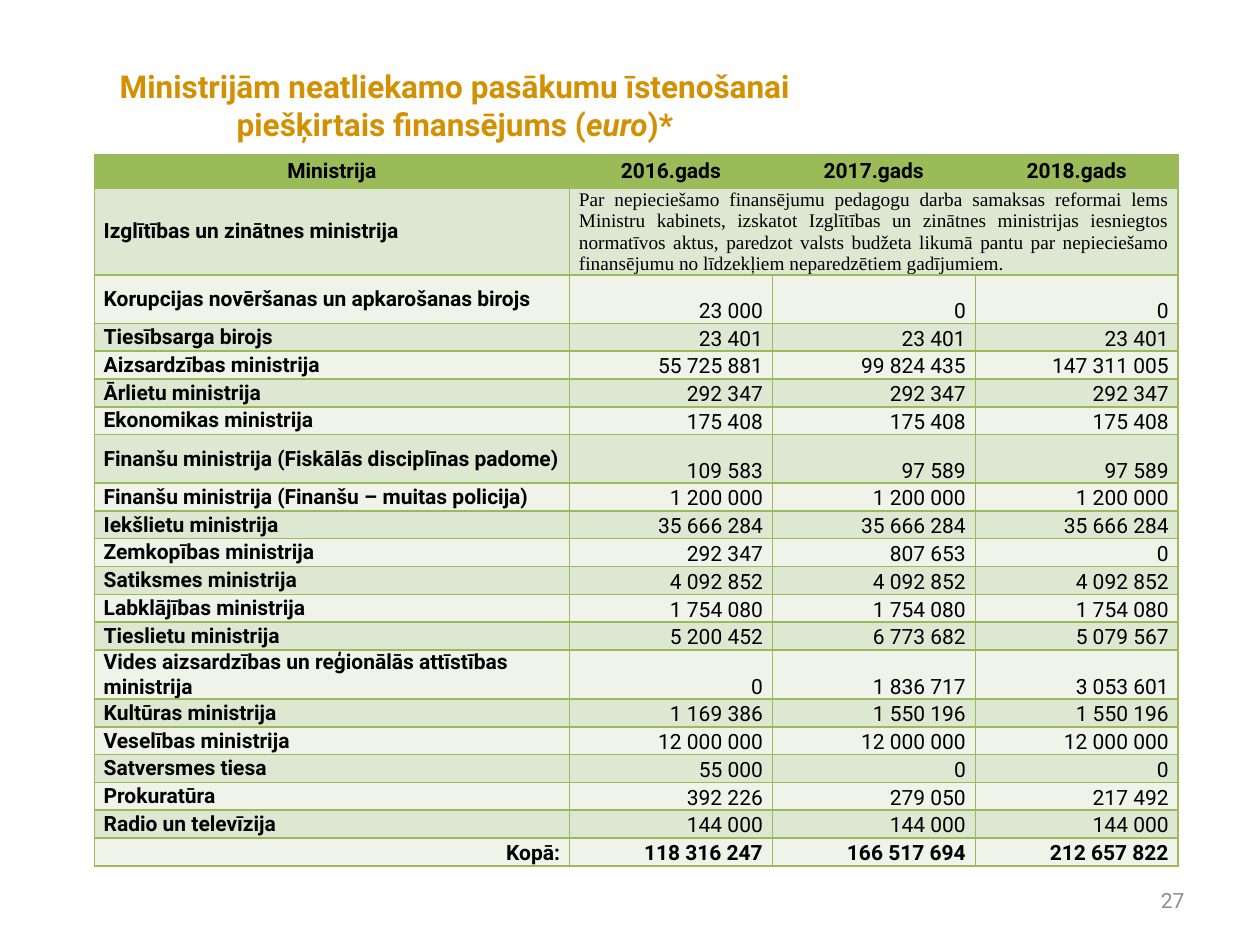
from dataclasses import dataclass

from lxml.etree import SubElement
from pptx import Presentation
from pptx.dml.color import RGBColor
from pptx.enum.text import MSO_ANCHOR, MSO_AUTO_SIZE, PP_ALIGN
from pptx.oxml.ns import qn
from pptx.util import Cm, Pt

COLORS = {
    "title": "D39001",
    "number": "8C8C8C",
    "text": "000000",
    "green": "9BBB59",
    "dark": "DEE7D1",
    "light": "EFF3EA",
}
FONT = "Roboto"
ROW, TALL, HEAD, NOTE_ROW = 0.56, 0.98, 0.68, 1.74
COL_WIDTHS = (9.58, 4.09, 4.09, 4.09)
HEADERS = ("Ministrija", "2016.gads", "2017.gads", "2018.gads")
NOTE = (
    "Par nepieciešamo finansējumu pedagogu darba samaksas reformai lems "
    "Ministru kabinets, izskatot Izglītības un zinātnes ministrijas iesniegtos "
    "normatīvos aktus, paredzot valsts budžeta likumā pantu par nepieciešamo "
    "finansējumu no līdzekļiem neparedzētiem gadījumiem."
)


@dataclass
class Funding:
    name: str
    amounts: tuple[int, ...] = ()
    height: float = ROW
    total: bool = False


FUNDING = [
    Funding("Izglītības un zinātnes ministrija", height=NOTE_ROW),
    Funding("Korupcijas novēršanas un apkarošanas birojs", (23000, 0, 0), TALL),
    Funding("Tiesībsarga birojs", (23401, 23401, 23401)),
    Funding("Aizsardzības ministrija", (55725881, 99824435, 147311005)),
    Funding("Ārlietu ministrija", (292347, 292347, 292347)),
    Funding("Ekonomikas ministrija", (175408, 175408, 175408)),
    Funding("Finanšu ministrija (Fiskālās disciplīnas padome)",
            (109583, 97589, 97589), TALL),
    Funding("Finanšu ministrija (Finanšu – muitas policija)",
            (1200000, 1200000, 1200000)),
    Funding("Iekšlietu ministrija", (35666284, 35666284, 35666284)),
    Funding("Zemkopības ministrija", (292347, 807653, 0)),
    Funding("Satiksmes ministrija", (4092852, 4092852, 4092852)),
    Funding("Labklājības ministrija", (1754080, 1754080, 1754080)),
    Funding("Tieslietu ministrija", (5200452, 6773682, 5079567)),
    Funding("Vides aizsardzības un reģionālās attīstības ministrija",
            (0, 1836717, 3053601), TALL),
    Funding("Kultūras ministrija", (1169386, 1550196, 1550196)),
    Funding("Veselības ministrija", (12000000, 12000000, 12000000)),
    Funding("Satversmes tiesa", (55000, 0, 0)),
    Funding("Prokuratūra", (392226, 279050, 217492)),
    Funding("Radio un televīzija", (144000, 144000, 144000)),
    Funding("Kopā:", (118316247, 166517694, 212657822), total=True),
]


def add_run(p, text: str, color: str = "text", **font_values) -> None:
    r = p.add_run()
    r.text = text
    values = {"name": FONT, "size": Pt(12), "bold": False} | font_values
    for key, value in values.items():
        setattr(r.font, key, value)
    r.font.color.rgb = RGBColor.from_string(COLORS[color])


def style_cell(cell, fill: str) -> None:
    values = {"margin_left": Cm(0.19), "margin_right": Cm(0.19),
              "margin_top": 0, "margin_bottom": 0}
    for key, value in values.items():
        setattr(cell, key, value)
    tcPr = cell._tc.get_or_add_tcPr()
    for side in ("lnL", "lnR", "lnT", "lnB"):
        ln = SubElement(tcPr, qn(f"a:{side}"), w=str(Pt(1)))
        line_fill = SubElement(ln, qn("a:solidFill"))
        SubElement(line_fill, qn("a:srgbClr"), val=COLORS["green"])
    cell.fill.solid()
    cell.fill.fore_color.rgb = RGBColor.from_string(COLORS[fill])


def write_cell(cell, text: str, align: PP_ALIGN, anchor: MSO_ANCHOR,
               **font_values) -> None:
    cell.vertical_anchor = anchor
    p = cell.text_frame.paragraphs[0]
    p.alignment = align
    add_run(p, text, **font_values)


def add_funding_table(s) -> None:
    heights = [HEAD] + [f.height for f in FUNDING]
    tbl = s.shapes.add_table(len(heights), len(HEADERS), Cm(1.9), Cm(3.12),
                             Cm(sum(COL_WIDTHS)), Cm(sum(heights))).table
    for col, width in zip(tbl.columns, COL_WIDTHS):
        col.width = Cm(width)
    for i, (row, height) in enumerate(zip(tbl.rows, heights)):
        row.height = Cm(height)
        fill = "green" if i == 0 else "dark" if i % 2 else "light"
        for cell in row.cells:
            style_cell(cell, fill)

    # Header row
    for j, text in enumerate(HEADERS):
        write_cell(tbl.cell(0, j), text, PP_ALIGN.CENTER, MSO_ANCHOR.MIDDLE,
                   bold=True)

    # Ministries and amounts
    for i, f in enumerate(FUNDING, 1):
        align = PP_ALIGN.RIGHT if f.total else PP_ALIGN.LEFT
        anchor = MSO_ANCHOR.BOTTOM if f.total else MSO_ANCHOR.MIDDLE
        write_cell(tbl.cell(i, 0), f.name, align, anchor, bold=True)
        for j, amount in enumerate(f.amounts, 1):
            write_cell(tbl.cell(i, j), f"{amount:,}".replace(",", " "),
                       PP_ALIGN.RIGHT, MSO_ANCHOR.BOTTOM, bold=f.total)

    # Note across the three years
    tbl.cell(1, 1).merge(tbl.cell(1, 3))
    write_cell(tbl.cell(1, 1), NOTE, PP_ALIGN.JUSTIFY, MSO_ANCHOR.BOTTOM,
               name="Times New Roman", size=Pt(11))


def place_text(sp, left: float, top: float, width: float, height: float,
               align: PP_ALIGN):
    box = {"left": left, "top": top, "width": width, "height": height}
    for key, value in box.items():
        setattr(sp, key, Cm(value))
    tf = sp.text_frame
    frame = {"word_wrap": True, "auto_size": MSO_AUTO_SIZE.NONE,
             "vertical_anchor": MSO_ANCHOR.MIDDLE}
    for key, value in frame.items():
        setattr(tf, key, value)
    p = tf.paragraphs[0]
    p.alignment = align
    return p


def main() -> None:
    prs = Presentation()
    prs.slide_width, prs.slide_height = Cm(25.4), Cm(19.05)
    s = prs.slides.add_slide(prs.slide_layouts[5])

    # Title
    p = place_text(s.shapes.title, 1.27, 1.52, 15.8, 1.2, PP_ALIGN.CENTER)
    for text, italic in (
        ("Ministrijām neatliekamo pasākumu īstenošanai piešķirtais finansējums (",
         False),
        ("euro", True),
        (")*", False),
    ):
        add_run(p, text, "title", size=Pt(18), bold=True, italic=italic)

    add_funding_table(s)

    # Page number
    sp = s.shapes.add_textbox(0, 0, 0, 0)
    p = place_text(sp, 18.2, 17.65, 5.93, 1.01, PP_ALIGN.RIGHT)
    add_run(p, "27", "number")

    prs.save("out.pptx")


if __name__ == "__main__":
    main()
